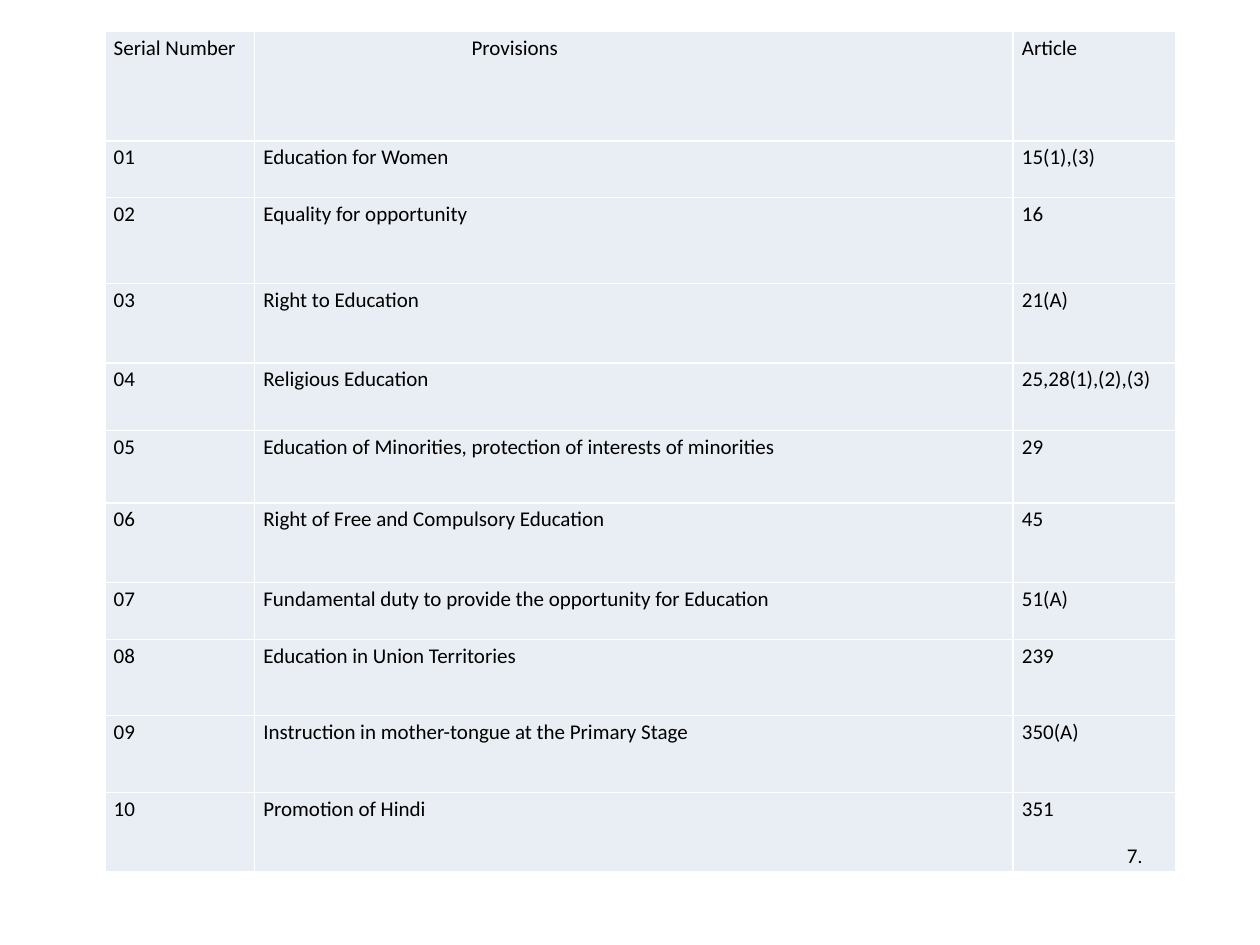
from lxml.etree import SubElement
from pptx import Presentation
from pptx.dml.color import RGBColor
from pptx.oxml.ns import qn
from pptx.util import Pt

BLACK = RGBColor(0x00, 0x00, 0x00)
WHITE = RGBColor(0xFF, 0xFF, 0xFF)
PALE_BLUE = RGBColor(0xE9, 0xED, 0xF4)

HEADINGS = ("Serial Number", "Provisions", "Article")
PROVISIONS = [
    ("Education for Women", "15(1),(3)"),
    ("Equality for opportunity", "16"),
    ("Right to Education", "21(A)"),
    ("Religious Education", "25,28(1),(2),(3)"),
    ("Education of Minorities, protection of interests of minorities", "29"),
    ("Right of Free and Compulsory Education", "45"),
    ("Fundamental duty to provide the opportunity for Education", "51(A)"),
    ("Education in Union Territories", "239"),
    ("Instruction in mother-tongue at the Primary Stage", "350(A)"),
    ("Promotion of Hindi", "351"),
]
COLUMN_WIDTHS = (85.5, 433.5, 93)
ROW_HEIGHTS = (62.5, 32.5, 49, 45.5, 38.5, 41.5, 45.5, 32.5, 43.5, 44, 45)
HEADING_INDENT = 119
PAGE_MARK_INDENT = 60


def write(paragraph, text, size=12, color=BLACK, font="Calibri", indent=0):
    """Add a formatted run, with an optional left indent for its paragraph."""
    paragraph.line_spacing = 1.15
    paragraph.space_after = Pt(10)
    if indent:
        properties = paragraph._p.get_or_add_pPr()
        properties.set("marL", str(Pt(indent)))
        properties.set("indent", "0")
    run = paragraph.add_run()
    run.text = text
    run.font.name = font
    run.font.size = Pt(size)
    run.font.color.rgb = color


def style_cell(cell):
    cell.margin_left = cell.margin_right = Pt(5)
    cell.margin_top = cell.margin_bottom = 0
    # White rules on all four sides
    properties = cell._tc.get_or_add_tcPr()
    for side in ("a:lnL", "a:lnR", "a:lnT", "a:lnB"):
        border = SubElement(properties, qn(side), w=str(Pt(1)))
        border_fill = SubElement(border, qn("a:solidFill"))
        SubElement(border_fill, qn("a:srgbClr"), val=str(WHITE))
    cell.fill.solid()
    cell.fill.fore_color.rgb = PALE_BLUE


def add_provisions_table(slide, left, top, width, height):
    rows = [HEADINGS] + [
        (f"{number:02}", provision, article)
        for number, (provision, article) in enumerate(PROVISIONS, 1)
    ]
    table = slide.shapes.add_table(
        len(rows), len(HEADINGS), Pt(left), Pt(top), Pt(width), Pt(height)
    ).table
    table.first_row = table.horz_banding = False

    # Column and row sizes, scaled to the box
    for column, share in zip(table.columns, COLUMN_WIDTHS):
        column.width = Pt(width * share / sum(COLUMN_WIDTHS))
    for row, share in zip(table.rows, ROW_HEIGHTS):
        row.height = Pt(height * share / sum(ROW_HEIGHTS))

    # Cell contents
    for row, entries in zip(table.rows, rows):
        for cell, entry in zip(row.cells, entries):
            style_cell(cell)
            indent = HEADING_INDENT if entry == "Provisions" else 0
            write(cell.text_frame.paragraphs[0], entry, indent=indent)

    # Page mark in the last cell
    last_cell = table.cell(len(rows) - 1, len(HEADINGS) - 1)
    page_mark = last_cell.text_frame.add_paragraph()
    write(page_mark, "7", indent=PAGE_MARK_INDENT)
    write(page_mark, ".", size=11)


def main():
    deck = Presentation()
    deck.slide_width, deck.slide_height = Pt(720), Pt(540)
    slide = deck.slides.add_slide(deck.slide_layouts[6])
    slide.background.fill.solid()
    slide.background.fill.fore_color.rgb = WHITE
    add_provisions_table(slide, left=60, top=18, width=612, height=480)
    deck.save("out.pptx")


if __name__ == "__main__":
    main()
